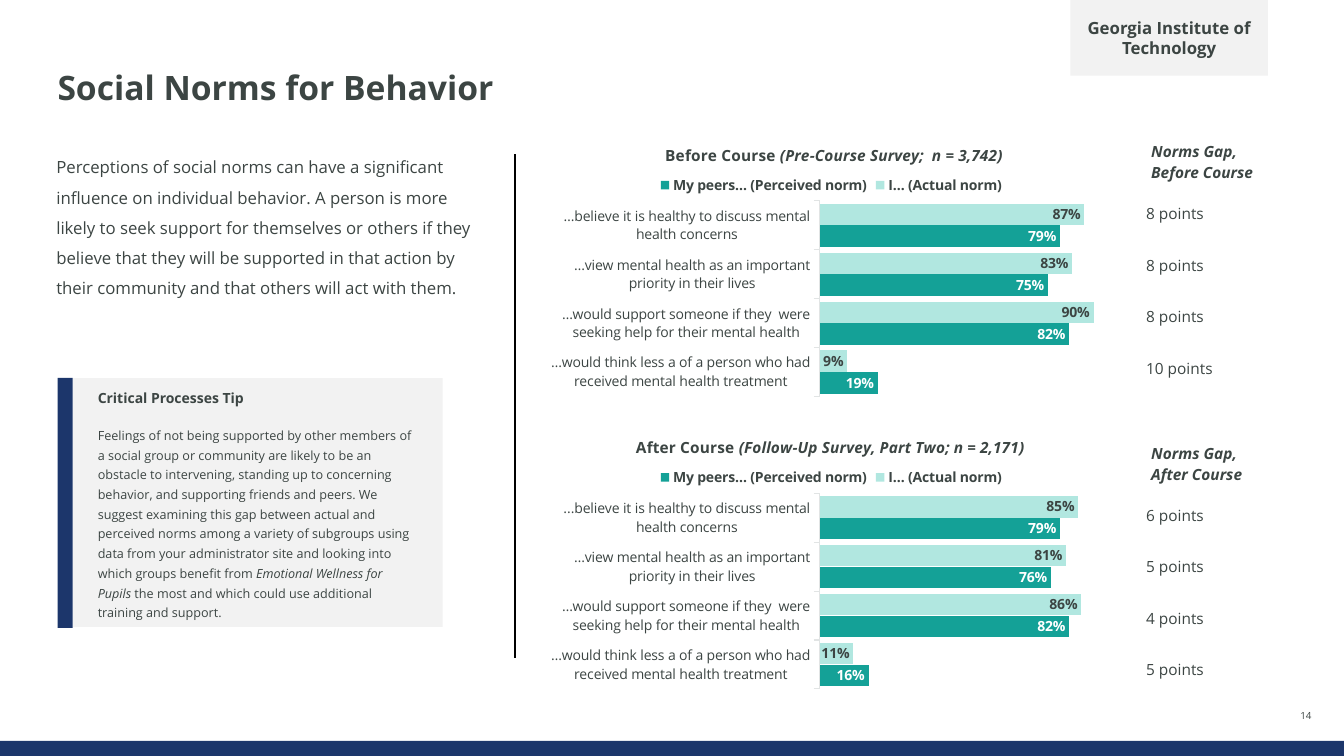
from lxml import etree
from pptx import Presentation
from pptx.chart.data import CategoryChartData
from pptx.dml.color import RGBColor
from pptx.enum.chart import (XL_CHART_TYPE, XL_LABEL_POSITION, XL_LEGEND_POSITION,
                             XL_TICK_LABEL_POSITION, XL_TICK_MARK)
from pptx.enum.shapes import MSO_CONNECTOR, MSO_SHAPE
from pptx.enum.text import MSO_ANCHOR, MSO_AUTO_SIZE, PP_ALIGN
from pptx.oxml.ns import qn
from pptx.util import Inches, Pt

BAR = XL_CHART_TYPE.BAR_CLUSTERED
INSIDE_END = XL_LABEL_POSITION.INSIDE_END
LEGEND_TOP = XL_LEGEND_POSITION.TOP
LABELS_LOW = XL_TICK_LABEL_POSITION.LOW
TICK_OUT, TICK_NONE = XL_TICK_MARK.OUTSIDE, XL_TICK_MARK.NONE
STRAIGHT, RECTANGLE = MSO_CONNECTOR.STRAIGHT, MSO_SHAPE.RECTANGLE
TOP, MIDDLE, BOTTOM = MSO_ANCHOR.TOP, MSO_ANCHOR.MIDDLE, MSO_ANCHOR.BOTTOM
LEFT, CENTER = PP_ALIGN.LEFT, PP_ALIGN.CENTER
FIXED_SIZE = MSO_AUTO_SIZE.NONE

WIDTH, HEIGHT = Inches(13.333), Inches(7.5)
FONT = "Open Sans"
INK, NAVY, PALE, WHITE = "3C4543", "1C366B", "F2F2F2", "FFFFFF"
MINT, TEAL, AXIS, BLACK = "B1E7E0", "14A197", "E1E4E4", "000000"

NORMS = [
    "believe it is healthy to discuss mental health concerns",
    "…view mental health as an important priority in their lives",
    "…would support someone if they  were seeking help for their mental health",
    "…would think less a of a person who had received mental health treatment",
]
# top of chart, top of table, dots, title, detail, title left, actual, perceived, gap heading, gaps
SURVEYS = [
    (16.13, 18, "…", "Before Course ", "(Pre-Course Survey;  n = 3,742)", 0.21,
     (0.87, 0.83, 0.9, 0.09), (0.79, 0.75, 0.82, 0.19),
     "Norms Gap, Before Course", (8, 8, 8, 10)),
    (54.8, 57.87, "...", "After Course ", "(Follow-Up Survey, Part Two; n = 2,171)", 0.16,
     (0.85, 0.81, 0.86, 0.11), (0.79, 0.76, 0.82, 0.16),
     "Norms Gap, After Course", (6, 5, 4, 5)),
]
INTRO = ("Perceptions of social norms can have a significant influence on individual behavior. "
         "A person is more likely to seek support for themselves or others if they believe that "
         "they will be supported in that action by their community and that others will act "
         "with them.")
TIP = [
    ("Feelings of not being supported by other members of a social group or community are "
     "likely to be an obstacle to intervening, standing up to concerning behavior, and "
     "supporting friends and peers. We suggest examining this gap between actual and perceived "
     "norms among a variety of subgroups using data from your administrator site and looking "
     "into which groups benefit from ", False),
    ("Emotional Wellness for Pupils", True),
    (" the most and which could use additional training and support.", False),
]


def color(hex_string):
    return RGBColor.from_string(hex_string)


def across(percent):
    return round(WIDTH * percent / 100)


def down(percent):
    return round(HEIGHT * percent / 100)


def area(left, top, width, height):
    """Turn percentages of the slide into a position and size."""
    return across(left), down(top), across(width), down(height)


def style(font, size, bold=False, italic=None, ink=INK):
    font.name, font.size, font.bold = FONT, Pt(size), bold
    font.color.rgb = color(ink)
    if italic is not None:
        font.italic = italic


def set_frame(frame, anchor, sides=0.0, ends=0.0):
    frame.word_wrap = True
    frame.auto_size = FIXED_SIZE
    frame.vertical_anchor = anchor
    frame.margin_left = frame.margin_right = Inches(sides)
    frame.margin_top = frame.margin_bottom = Inches(ends)


def write(paragraph, text, size, bold=False, italic=None, align=LEFT, spacing=1.0):
    paragraph.text = text
    paragraph.alignment = align
    paragraph.line_spacing = spacing
    style(paragraph.font, size, bold, italic)


def add_block(slide, place, fill):
    shape = slide.shapes.add_shape(RECTANGLE, *area(*place))
    shape.shadow.inherit = False
    shape.fill.solid()
    shape.fill.fore_color.rgb = color(fill)
    shape.line.fill.background()
    return shape


def add_text(slide, place, text, size, anchor=TOP, sides=0.0, ends=0.0, **layout):
    frame = slide.shapes.add_textbox(*area(*place)).text_frame
    set_frame(frame, anchor, sides, ends)
    write(frame.paragraphs[0], text, size, **layout)


def set_title(slide, text):
    title = slide.shapes.title
    title.left, title.top, title.width, title.height = area(4.28, 9.47, 90.15, 9.33)
    set_frame(title.text_frame, TOP)
    write(title.text_frame.paragraphs[0], text, 24, bold=True, spacing=0.9)


def add_divider(slide):
    line = slide.shapes.add_connector(STRAIGHT, across(38.33), down(20.4),
                                      across(38.33), down(87.07))
    line.line.color.rgb = color(BLACK)
    line.line.width = Pt(1)
    etree.SubElement(line._element.spPr, qn("a:effectLst"))


def add_tip(slide):
    frame = add_block(slide, (5.4, 50, 27.53, 32.93), PALE).text_frame
    set_frame(frame, MIDDLE, sides=0.25)
    write(frame.paragraphs[0], "Critical Processes Tip", 10, bold=True, spacing=1.3)
    paragraph = frame.add_paragraph()
    write(paragraph, "", 9, spacing=1.3)
    paragraph.space_before = Pt(12)
    for text, italic in TIP:
        run = paragraph.add_run()
        run.text = text
        run.font.italic = italic
    add_block(slide, (4.28, 50, 1.13, 33.07), NAVY)


def place_part(part, after, **shares):
    """Lay out a chart part by shares of the chart, behind its child named after."""
    for old in part.findall(qn("c:layout")):
        part.remove(old)
    layout = etree.Element(qn("c:layout"))
    manual = etree.SubElement(layout, qn("c:manualLayout"))
    if "w" in shares:
        etree.SubElement(manual, qn("c:layoutTarget"), val="inner")
    for axis in "xy":
        etree.SubElement(manual, qn(f"c:{axis}Mode"), val="edge")
    for name, share in shares.items():
        etree.SubElement(manual, qn(f"c:{name}"), val=str(share))
    part.insert(part.index(part.find(qn(after))) + 1 if after else 0, layout)


def add_norms_chart(slide, top, dots, title, detail, title_left, actual, perceived):
    data = CategoryChartData(number_format="0%")
    data.categories = [dots + NORMS[0]] + NORMS[1:]
    data.add_series("I… (Actual norm)", actual)
    data.add_series("My peers… (Perceived norm)", perceived)
    chart = slide.shapes.add_chart(BAR, *area(40.13, top, 43.5, 38.67), data).chart
    style(chart.font, 10)

    paragraph = chart.chart_title.text_frame.paragraphs[0]
    for text, italic in ((title, False), (detail, True)):
        run = paragraph.add_run()
        run.text = text
        style(run.font, 11, bold=True, italic=italic)
    place_part(chart.chart_title._element, "c:tx", x=title_left, y=0.06)

    chart.has_legend = True
    chart.legend.position = LEGEND_TOP
    chart.legend.include_in_layout = False
    style(chart.legend.font, 10, bold=True)
    place_part(chart.legend._element, "c:legendPos", x=0.2, y=0.17)
    place_part(chart._chartSpace.chart.plotArea, None, x=0.48, y=0.27, w=0.52, h=0.67)

    categories, values = chart.category_axis, chart.value_axis
    categories.reverse_order = True
    categories.major_tick_mark, categories.minor_tick_mark = TICK_OUT, TICK_NONE
    categories.tick_label_position = LABELS_LOW
    categories.format.line.color.rgb = color(AXIS)
    categories.format.line.width = Pt(0.75)
    style(categories.tick_labels.font, 10)
    values.minimum_scale, values.maximum_scale = 0, 1
    values.has_major_gridlines = False
    values.visible = False

    plot = chart.plots[0]
    plot.gap_width, plot.overlap, plot.vary_by_categories = 26, -1, False
    for series, fill, ink in zip(plot.series, (MINT, TEAL), (INK, WHITE)):
        series.format.fill.solid()
        series.format.fill.fore_color.rgb = color(fill)
        labels = series.data_labels
        labels.show_value = True
        labels.position = INSIDE_END
        labels.number_format, labels.number_format_is_linked = "0%", False
        style(labels.font, 10, bold=True, ink=ink)


def add_gap_table(slide, top, heading, gaps):
    texts = [heading] + [f"{gap} points" for gap in gaps]
    table = slide.shapes.add_table(len(texts), 1, *area(84.9, top, 10.2, 33.73)).table
    table.first_row = table.horz_banding = False
    for index, text in enumerate(texts):
        is_heading = index == 0
        table.rows[index].height = down(6.53 if is_heading else 6.8)
        cell = table.cell(index, 0)
        cell.fill.background()
        cell.vertical_anchor = MIDDLE
        cell.margin_left = cell.margin_right = Inches(0.1 if is_heading else 0.05)
        cell.margin_top = cell.margin_bottom = Inches(0.05 if is_heading else 0)
        write(cell.text_frame.paragraphs[0], text, 11, bold=is_heading, italic=is_heading)


def main():
    presentation = Presentation()
    presentation.slide_width, presentation.slide_height = WIDTH, HEIGHT
    slide = presentation.slides.add_slide(presentation.slide_layouts[5])

    add_block(slide, (0, 98, 100, 2), NAVY)
    set_title(slide, "Social Norms for Behavior")
    add_text(slide, (95.25, 93.47, 3.83, 2), "14", 7, anchor=BOTTOM, align=CENTER)
    add_text(slide, (3.45, 18.8, 33.08, 25.2), INTRO, 12, sides=0.1, ends=0.05, spacing=1.5)
    add_divider(slide)
    add_tip(slide)
    for chart_top, table_top, *chart_content, heading, gaps in SURVEYS:
        add_norms_chart(slide, chart_top, *chart_content)
        add_gap_table(slide, table_top, heading, gaps)

    badge = add_block(slide, (79.65, 0, 14.7, 10), PALE).text_frame
    set_frame(badge, MIDDLE, sides=0.1)
    write(badge.paragraphs[0], "Georgia Institute of Technology", 12, bold=True, align=CENTER)
    presentation.save("out.pptx")


if __name__ == "__main__":
    main()
